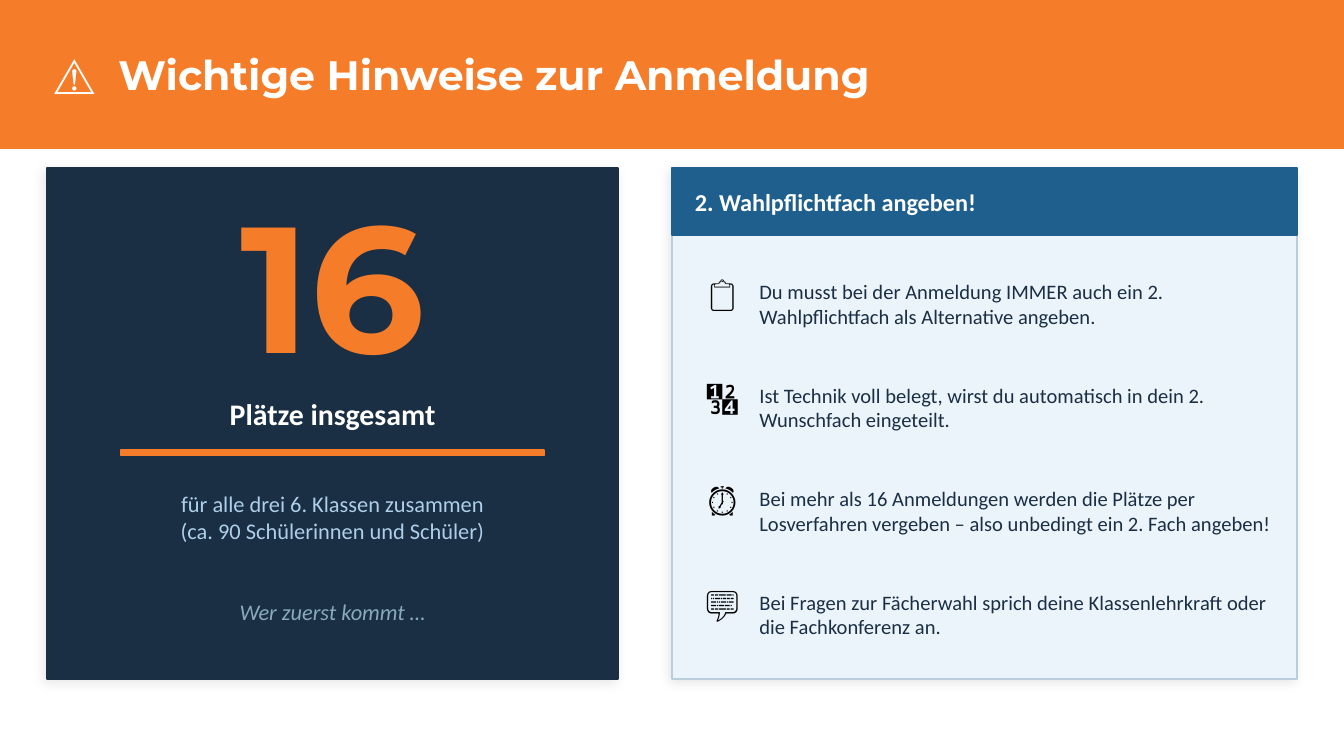
from lxml import etree
from pptx import Presentation
from pptx.dml.color import RGBColor
from pptx.enum.shapes import MSO_SHAPE
from pptx.enum.text import MSO_ANCHOR, MSO_AUTO_SIZE, PP_ALIGN
from pptx.oxml.ns import qn
from pptx.util import Inches, Pt

RECTANGLE = MSO_SHAPE.RECTANGLE
MIDDLE = MSO_ANCHOR.MIDDLE
FIXED_SIZE = MSO_AUTO_SIZE.NONE
LEFT, CENTER = PP_ALIGN.LEFT, PP_ALIGN.CENTER
TITLE_ONLY = 5
GRID = 0.05
SLIDE_WIDTH = 10

COLORS = {
    "orange": "F57C28",
    "navy": "1A2E44",
    "blue": "1E5F8E",
    "ice": "EBF4FB",
    "border": "BBCCDD",
    "sky": "AECFEA",
    "mist": "88AABB",
    "white": "FFFFFF",
    "black": "000000",
}

HINTS = [
    ("📋", "Du musst bei der Anmeldung IMMER auch ein 2. Wahlpflichtfach als Alternative angeben."),
    ("🔢", "Ist Technik voll belegt, wirst du automatisch in dein 2. Wunschfach eingeteilt."),
    ("⏰", "Bei mehr als 16 Anmeldungen werden die Plätze per Losverfahren vergeben "
           "– also unbedingt ein 2. Fach angeben!"),
    ("💬", "Bei Fragen zur Fächerwahl sprich deine Klassenlehrkraft oder die Fachkonferenz an."),
]


def color(name):
    return RGBColor.from_string(COLORS[name])


def cells(count):
    return Inches(count * GRID)


def write(frame, text, size=11, fill="navy", font="Calibri", bold=False,
          italic=False, align=LEFT, inset=0, tab=None):
    frame.word_wrap = True
    frame.auto_size = FIXED_SIZE
    frame.vertical_anchor = MIDDLE
    frame.margin_left = frame.margin_right = Inches(inset)
    frame.margin_top = frame.margin_bottom = Inches(inset)
    for index, line in enumerate(text.split("\n")):
        paragraph = frame.add_paragraph() if index else frame.paragraphs[0]
        paragraph.alignment = align
        if tab:
            stops = etree.SubElement(paragraph._p.get_or_add_pPr(), qn("a:tabLst"))
            etree.SubElement(stops, qn("a:tab"), pos=str(Inches(tab)), algn="l")
        run = paragraph.add_run()
        run.text = line
        run.font.size = Pt(size)
        run.font.name = font
        run.font.bold = bold
        run.font.italic = italic
        run.font.color.rgb = color(fill)


class SlideBuilder:
    heading_font = "Montserrat"

    def __init__(self, slide):
        self.slide = slide

    def panel(self, left, top, width, height, fill, line=None, raised=False):
        panel = self.slide.shapes.add_shape(
            RECTANGLE, cells(left), cells(top), cells(width), cells(height))
        panel.fill.solid()
        panel.fill.fore_color.rgb = color(fill)
        panel.line.color.rgb = color(line or fill)
        panel.line.width = Pt(1)
        panel.shadow.inherit = False
        if raised:
            effects = panel._element.spPr.find(qn("a:effectLst"))
            shadow = etree.SubElement(
                effects, qn("a:outerShdw"), blurRad=str(Pt(6)), dist=str(Pt(2)),
                dir=str(135 * 60000), algn="bl", rotWithShape="0")
            tone = etree.SubElement(shadow, qn("a:srgbClr"), val=COLORS["black"])
            etree.SubElement(tone, qn("a:alpha"), val="10000")

    def text(self, left, top, width, height, text, **style):
        box = self.slide.shapes.add_textbox(
            cells(left), cells(top), cells(width), cells(height))
        write(box.text_frame, text, **style)

    def title(self, left, top, width, height, text, **style):
        title = self.slide.shapes.title
        title.left, title.top = cells(left), cells(top)
        title.width, title.height = cells(width), cells(height)
        write(title.text_frame, text, font=self.heading_font, bold=True, **style)
        title.element.getparent().append(title.element)

    def hint(self, top, icon, text):
        self.text(103, top, 9, 11, icon, size=18, fill="black", align=CENTER)
        self.text(113, top + 1, 77, 12.4, text)


def main():
    presentation = Presentation()
    presentation.slide_width = Inches(SLIDE_WIDTH)
    presentation.slide_height = Inches(SLIDE_WIDTH * 9 / 16)
    layout = presentation.slide_layouts[TITLE_ONLY]
    page = SlideBuilder(presentation.slides.add_slide(layout))

    page.panel(0, 0, 200, 22, "orange")
    page.title(8, 5, 184, 12, "⚠️\tWichtige Hinweise zur Anmeldung",
               size=22, fill="white", tab=0.48)

    page.panel(7, 25, 85, 76, "navy", raised=True)
    page.text(7, 27, 85, 30, "16", size=96, fill="orange",
              font=page.heading_font, bold=True, align=CENTER)
    page.text(9, 57, 81, 9, "Plätze insgesamt", size=16, fill="white",
              bold=True, align=CENTER)
    page.panel(18, 67, 63, 0.8, "orange")
    page.text(9, 69, 81, 16,
              "für alle drei 6. Klassen zusammen\n(ca. 90 Schülerinnen und Schüler)",
              size=12, fill="sky", align=CENTER)
    page.text(9, 86, 81, 10, "Wer zuerst kommt …", size=12, fill="mist",
              italic=True, align=CENTER)

    page.panel(100, 25, 93, 76, "ice", line="border", raised=True)
    page.panel(100, 25, 93, 10, "blue")
    page.text(102, 25, 89, 10, "2. Wahlpflichtfach angeben!", size=13,
              fill="white", bold=True, inset=0.07)
    for row, (icon, text) in enumerate(HINTS):
        page.hint(38 + row * 15.4, icon, text)

    presentation.save("out.pptx")


if __name__ == "__main__":
    main()
